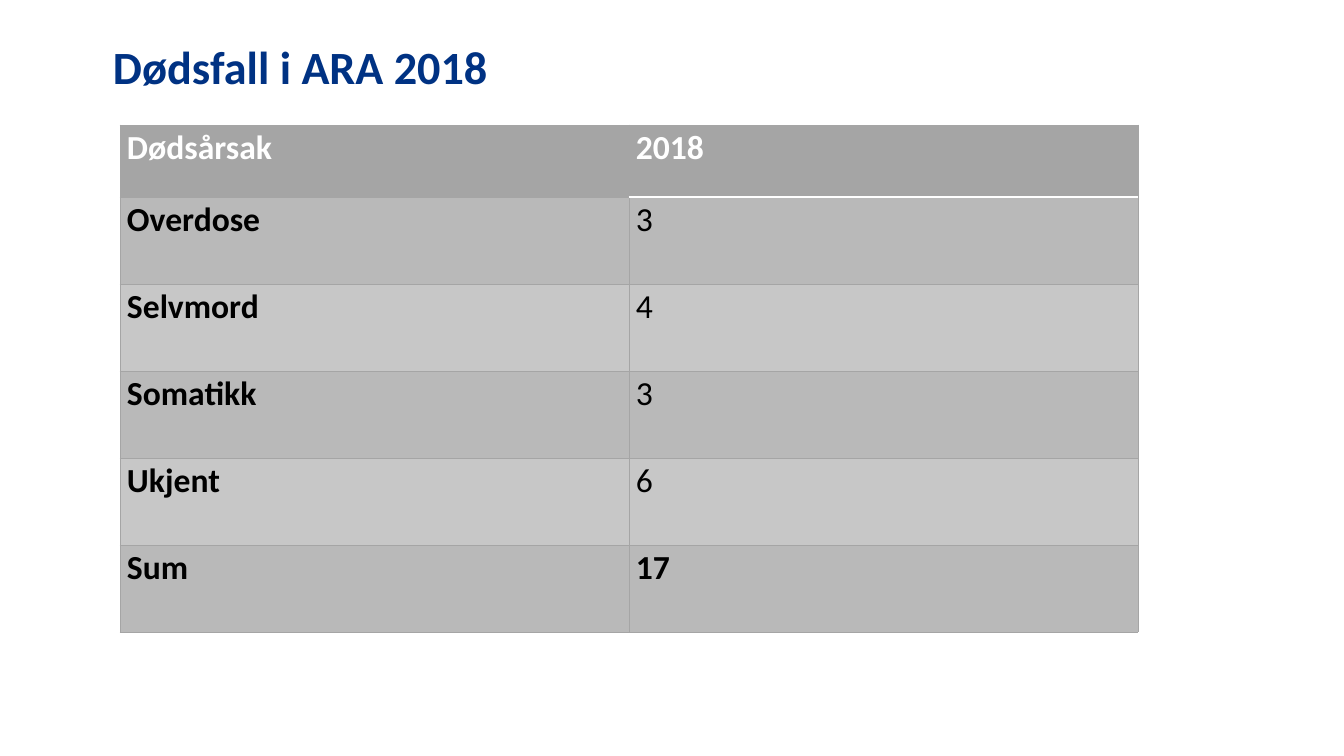
import pptx
import pptx.util
import pptx.dml.color
import pptx.enum.text
import pptx.oxml.ns
import lxml.etree

COLORS = {"navy": "003283", "head": "A5A5A5", "dark": "B9B9B9",
          "light": "C7C7C7", "white": "FFFFFF", "black": "000000"}


def px(count):
    return pptx.util.Emu(round(count * 914400 / 100.8))


def add_run(para, text, size, color, bold):
    run = para.add_run()
    run.text = text
    run.font.name = "Calibri"
    run.font.size = pptx.util.Pt(size)
    run.font.bold = bold
    run.font.color.rgb = pptx.dml.color.RGBColor.from_string(COLORS[color])


deck = pptx.Presentation()
deck.slide_width, deck.slide_height = px(1344), px(756)
slide = deck.slides.add_slide(deck.slide_layouts[5])

# Title
title = slide.shapes.title
title.left, title.top, title.width, title.height = px(93), px(40), px(1159), px(146)
frame = title.text_frame
frame.word_wrap = True
frame.auto_size = pptx.enum.text.MSO_AUTO_SIZE.NONE
frame.vertical_anchor = pptx.enum.text.MSO_ANCHOR.TOP
frame.margin_left = px(20)
para = frame.paragraphs[0]
para.alignment = pptx.enum.text.PP_ALIGN.LEFT
para.line_spacing = 0.9
add_run(para, "Dødsfall i ARA 2018", 33, "navy", True)

# Table of deaths by cause
ROWS = [("Dødsårsak", "2018"), ("Overdose", "3"), ("Selvmord", "4"),
        ("Somatikk", "3"), ("Ukjent", "6"), ("Sum", "17")]
HEAD, BODY, COL = 72, 87, 509
last = len(ROWS) - 1
table = slide.shapes.add_table(len(ROWS), 2, px(120), px(125),
                               px(2 * COL), px(HEAD + last * BODY)).table
for col in table.columns:
    col.width = px(COL)

for r, texts in enumerate(ROWS):
    table.rows[r].height = px(BODY if r else HEAD)
    shade = "head" if r == 0 else "dark" if r % 2 else "light"
    for c, text in enumerate(texts):
        cell = table.cell(r, c)
        cell.margin_left = cell.margin_right = px(7)
        cell.margin_top = cell.margin_bottom = 0
        cell.fill.solid()
        cell.fill.fore_color.rgb = pptx.dml.color.RGBColor.from_string(COLORS[shade])
        para = cell.text_frame.paragraphs[0]
        para.line_spacing = 1.07
        add_run(para, text, 24, "black" if r else "white",
                c == 0 or r in (0, last))

        # Cell borders, with a white rule under the year
        props = cell._tc.get_or_add_tcPr()
        for i, side in enumerate(("lnL", "lnR", "lnT", "lnB")):
            rule = c == 1 and (r, side) in ((0, "lnB"), (1, "lnT"))
            line = lxml.etree.Element(pptx.oxml.ns.qn("a:" + side))
            line.set("w", str(pptx.util.Pt(1 if rule else 0.5)))
            fill = lxml.etree.SubElement(line, pptx.oxml.ns.qn("a:solidFill"))
            tone = lxml.etree.SubElement(fill, pptx.oxml.ns.qn("a:srgbClr"))
            tone.set("val", COLORS["white" if rule else "head"])
            props.insert(i, line)

deck.save("out.pptx")
